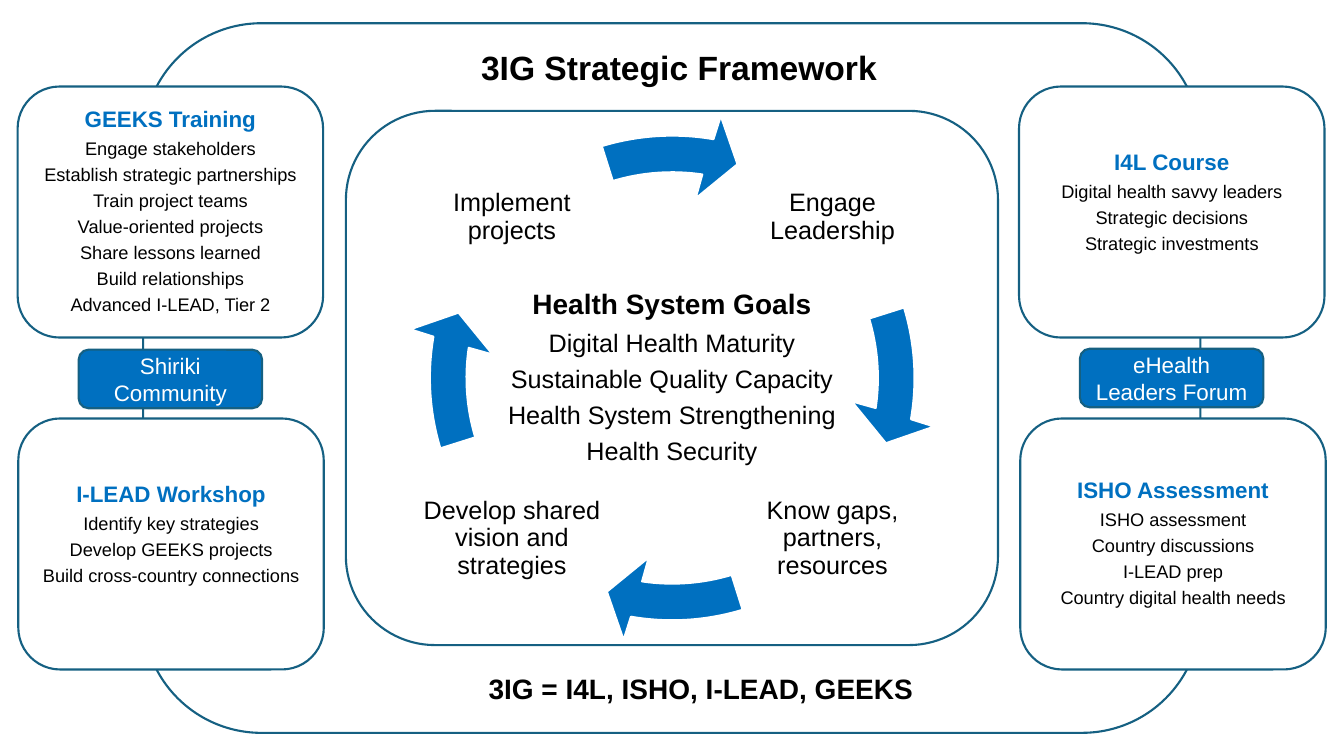
from math import atan, cos, hypot, radians, sin, tan

from lxml import etree
from pptx import Presentation
from pptx.dml.color import RGBColor
from pptx.enum.shapes import MSO_SHAPE
from pptx.enum.text import MSO_ANCHOR, PP_ALIGN
from pptx.oxml.ns import qn
from pptx.util import Pt

ROUND = MSO_SHAPE.ROUNDED_RECTANGLE
MIDDLE, TOP = MSO_ANCHOR.MIDDLE, MSO_ANCHOR.TOP
CENTER = PP_ALIGN.CENTER

BLUE = RGBColor(0x00, 0x70, 0xC0)
TEAL = RGBColor(0x15, 0x60, 0x82)
BLACK = RGBColor(0, 0, 0)
WHITE = RGBColor(255, 255, 255)

# Middle and size of the cycle
MID_X, MID_Y, CYCLE = 480.2, 270, 381.6

CARD_W, CARD_H = 218.2, 179.3
# left, top, room kept free below the text, heading, items
CARDS = [
    (12.6, 61.8, 0, "GEEKS Training",
     ["Engage stakeholders", "Establish strategic partnerships",
      "Train project teams", "Value-oriented projects",
      "Share lessons learned", "Build relationships",
      "Advanced I-LEAD, Tier 2"]),
    (13.1, 298.9, 13, "I-LEAD Workshop",
     ["Identify key strategies", "Develop GEEKS projects",
      "Build cross-country connections"]),
    (727.9, 61.8, 13, "I4L Course",
     ["Digital health savvy leaders", "Strategic decisions",
      "Strategic investments"]),
    (728.8, 298.9, 0, "ISHO Assessment",
     ["ISHO assessment", "Country discussions", "I-LEAD prep",
      "Country digital health needs"]),
]
GOALS = ["Digital Health Maturity", "Sustainable Quality Capacity",
         "Health System Strengthening", "Health Security"]
# Column and row side of each step, seen from the middle
STEPS = [
    (1, -1, "Engage Leadership"),
    (1, 1, "Know gaps, partners, resources"),
    (-1, 1, "Develop shared vision and strategies"),
    (-1, -1, "Implement projects"),
]
BADGES = [(56.2, 249.8, "Shiriki Community"),
          (771.4, 249.1, "eHealth Leaders Forum")]


def put_text(frame, text, size=18, color=BLACK, bold=False, gap=0,
             line=0.9, first=True):
    """Write one centred paragraph."""
    para = frame.paragraphs[0] if first else frame.add_paragraph()
    para.alignment = CENTER
    para.line_spacing = line
    para.space_before = Pt(gap)
    run = para.add_run()
    run.text = text
    font = run.font
    font.name, font.size, font.bold = "Arial", Pt(size), bold
    font.color.rgb = color


def put_list(frame, head, items, size, gap):
    """Write the items below a heading."""
    for i, item in enumerate(items):
        lead = head if i == 0 else gap
        put_text(frame, item, size=size, gap=lead, first=False)


def set_frame(frame, side, edge, anchor=MIDDLE, below=0):
    frame.word_wrap = True
    frame.vertical_anchor = anchor
    frame.margin_left = frame.margin_right = Pt(side)
    frame.margin_top = Pt(edge)
    frame.margin_bottom = Pt(edge + below)


def add_panel(slide, left, top, width, height, fill=None, below=0):
    """Add a rounded panel and return its text frame."""
    panel = slide.shapes.add_shape(
        ROUND, Pt(left), Pt(top), Pt(width), Pt(height))
    panel.shadow.inherit = False
    if fill is None:
        panel.fill.background()
    else:
        panel.fill.solid()
        panel.fill.fore_color.rgb = fill
    panel.line.color.rgb = TEAL
    panel.line.width = Pt(1.5)
    set_frame(panel.text_frame, 7.2, 3.6, below=below)
    return panel.text_frame


def add_label(slide, text, left, top, width, height, side=7.2, edge=3.6,
              anchor=TOP, **style):
    box = slide.shapes.add_textbox(
        Pt(left), Pt(top), Pt(width), Pt(height))
    set_frame(box.text_frame, side, edge, anchor)
    put_text(box.text_frame, text, **style)


def arc(radius, start, end):
    """Give the four Bézier points of an arc as radius and angle."""
    pull = 4 / 3 * tan(radians(end - start) / 4)
    far = radius * hypot(1, pull)
    lean = atan(pull) / radians(1)
    return [(radius, start), (far, start + lean),
            (far, end - lean), (radius, end)]


def bend(lines):
    """Merge three straight steps into one curve."""
    curve = etree.Element(qn("a:cubicBezTo"))
    lines[0].addprevious(curve)
    for line in lines:
        curve.append(line[0])
        line.getparent().remove(line)


def fit_cycle(arrow):
    """Give the arrow the frame of the whole cycle."""
    left, top = Pt(MID_X - CYCLE / 2), Pt(MID_Y - CYCLE / 2)
    right, down = arrow.left - left, arrow.top - top
    for spot in arrow._element.iter(qn("a:pt")):
        spot.set("x", str(int(spot.get("x")) + right))
        spot.set("y", str(int(spot.get("y")) + down))
    for track in arrow._element.iter(qn("a:path")):
        track.set("w", str(Pt(CYCLE)))
        track.set("h", str(Pt(CYCLE)))
    arrow.left, arrow.top = left, top
    arrow.width = arrow.height = Pt(CYCLE)


def add_arrow(slide, turn):
    """Add a bent arrow, turned clockwise about the middle."""
    head = [(190.4, 10.5), (159.6, 17), (129.2, 7.4)]
    points = [(Pt(MID_X + r * cos(radians(a + turn))),
               Pt(MID_Y + r * sin(radians(a + turn))))
              for r, a in arc(173.1, -16.9, 9.8) + head
              + arc(146.9, 8.4, -16.8)]
    pen = slide.shapes.build_freeform(*points[0], scale=1.0)
    pen.add_line_segments(points[1:], close=True)
    arrow = pen.convert_to_shape()
    lines = list(arrow._element.iter(qn("a:lnTo")))
    bend(lines[:3])
    bend(lines[7:10])
    fit_cycle(arrow)
    arrow.shadow.inherit = False
    arrow.fill.solid()
    arrow.fill.fore_color.rgb = BLUE
    arrow.line.color.rgb = WHITE
    arrow.line.width = Pt(1.5)


def main():
    deck = Presentation()
    deck.slide_width, deck.slide_height = Pt(960), Pt(540)
    slide = deck.slides.add_slide(deck.slide_layouts[6])

    # Outer frame, which also links the cards
    add_panel(slide, 102.2, 16.6, 755.3, 506.9)

    # Cycle of steps and arrows
    side = 134.6
    for i, (col, row, text) in enumerate(STEPS):
        add_label(slide, text, MID_X + col * 114.5 - side / 2,
                  MID_Y + row * 114.8 - side / 2, side, side,
                  side=1.4, edge=1.4, anchor=MIDDLE)
        add_arrow(slide, 90 * i)

    # Goals in the middle
    goals = add_panel(slide, 247.1, 79.2, 465.8, CYCLE)
    put_text(goals, "Health System Goals", size=20, bold=True)
    put_list(goals, 7, GOALS, 18, 6.3)

    # Programme cards
    for left, top, below, title, items in CARDS:
        card = add_panel(slide, left, top, CARD_W, CARD_H, WHITE, below)
        put_text(card, title, size=16, color=BLUE, bold=True)
        put_list(card, 5.2, items, 13, 4.6)

    # Badges between the cards
    for left, top, text in BADGES:
        badge = add_panel(slide, left, top, 131, 41.8, BLUE)
        put_text(badge, text, size=16, color=WHITE, line=1.0)

    # Title and key
    add_label(slide, "3IG Strategic Framework", 317.6, 29.9, 334.8, 36,
              size=24, bold=True, line=1.0)
    add_label(slide, "3IG = I4L, ISHO, I-LEAD, GEEKS", 330.8, 476.2,
              339.8, 31.7, size=20, bold=True, line=1.0)

    deck.save("out.pptx")


if __name__ == "__main__":
    main()
